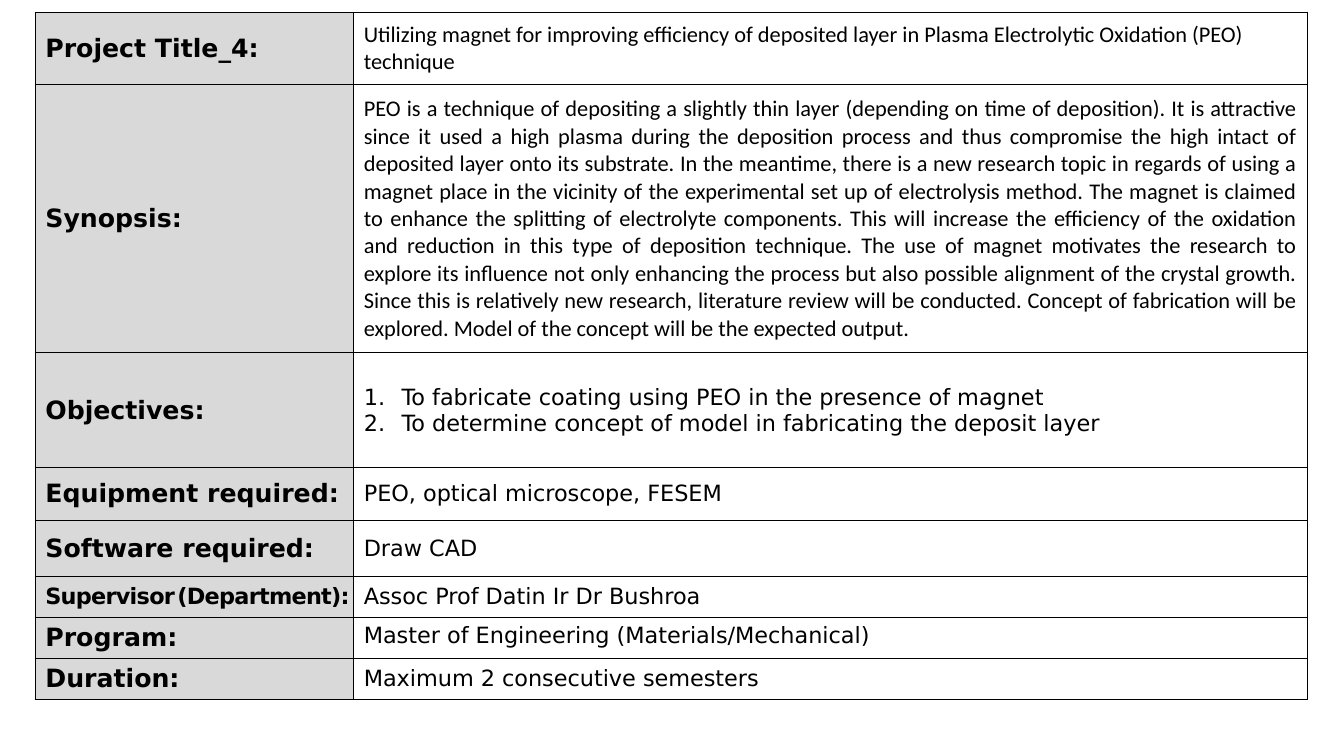
from dataclasses import dataclass

from lxml import etree
from pptx import Presentation
from pptx.dml.color import RGBColor
from pptx.enum.text import MSO_ANCHOR, PP_ALIGN
from pptx.oxml.ns import qn
from pptx.util import Pt

TOP, MIDDLE = MSO_ANCHOR.TOP, MSO_ANCHOR.MIDDLE
LEFT, JUSTIFY = PP_ALIGN.LEFT, PP_ALIGN.JUSTIFY


@dataclass(frozen=True)
class Theme:
    """Colours, fonts and type sizes."""
    ink: str = "000000"
    paper: str = "FFFFFF"
    shade: str = "D9D9D9"
    sans: str = "DejaVu Sans"
    prose: str = "Calibri"
    head: float = 18
    body: float = 16
    gap: float = 5
    rule: float = 1


@dataclass(frozen=True)
class Row:
    """One labelled row of the project sheet."""
    high: float
    label: str
    lines: tuple
    font: str = Theme.sans
    align: int = LEFT
    anchor: int = MIDDLE
    listed: bool = False
    tight: bool = False


THEME = Theme()
BOX = (25.2, 8.7)
COLS = (227.5, 681.1)
INDENT = 27
SYNOPSIS = (
    "PEO is a technique of depositing a slightly thin layer (depending on "
    "time of deposition).",
    "It is attractive since it used a high plasma during the deposition "
    "process and thus compromise the high intact of deposited layer onto "
    "its substrate.",
    "In the meantime, there is a new research topic in regards of using a "
    "magnet place in the vicinity of the experimental set up of "
    "electrolysis method.",
    "The magnet is claimed to enhance the splitting of electrolyte "
    "components.",
    "This will increase the efficiency of the oxidation and reduction in "
    "this type of deposition technique.",
    "The use of magnet motivates the research to explore its influence not "
    "only enhancing the process but also possible alignment of the crystal "
    "growth.",
    "Since this is relatively new research, literature review will be "
    "conducted.",
    "Concept of fabrication will be explored.",
    "Model of the concept will be the expected output.",
)
ROWS = (
    Row(51.9, "Project Title_4:", (
        "Utilizing magnet for improving efficiency of deposited layer in "
        "Plasma Electrolytic Oxidation (PEO) technique",), font=THEME.prose),
    Row(191.5, "Synopsis:", (" ".join(SYNOPSIS),),
        font=THEME.prose, align=JUSTIFY),
    Row(82.1, "Objectives:", (
        "To fabricate coating using PEO in the presence of magnet",
        "To determine concept of model in fabricating the deposit layer"),
        listed=True),
    Row(37.5, "Equipment required:", ("PEO, optical microscope, FESEM",)),
    Row(40.3, "Software required:", ("Draw CAD",)),
    Row(29.3, "Supervisor (Department):", ("Assoc Prof Datin Ir Dr Bushroa",),
        tight=True),
    Row(29.3, "Program:", ("Master of Engineering (Materials/Mechanical)",),
        anchor=TOP),
    Row(29.3, "Duration:", ("Maximum 2 consecutive semesters",)),
)


def add_run(para, text, size, font, bold=False, space=0):
    """Append one formatted run to a paragraph."""
    run = para.add_run()
    run.text = text
    run.font.size = Pt(size)
    run.font.name = font
    run.font.bold = bold
    run.font.color.rgb = RGBColor.from_string(THEME.ink)
    if space:
        run.font._element.set("spc", str(round(space * 100)))


def add_number(para):
    """Number a paragraph with a hanging indent."""
    props = para._p.get_or_add_pPr()
    props.set("marL", str(Pt(INDENT)))
    props.set("indent", str(-Pt(INDENT)))
    etree.SubElement(props, qn("a:buFont"), typeface="+mj-lt")
    etree.SubElement(props, qn("a:buAutoNum"), type="arabicPeriod")


def style_cell(cell, fill, anchor):
    """Set the fill, anchor and four borders of a cell."""
    cell.fill.solid()
    cell.fill.fore_color.rgb = RGBColor.from_string(fill)
    cell.vertical_anchor = anchor
    props = cell._tc.get_or_add_tcPr()
    for spot, side in enumerate(("lnL", "lnR", "lnT", "lnB")):
        line = etree.Element(qn(f"a:{side}"), w=str(Pt(THEME.rule)))
        paint = etree.SubElement(line, qn("a:solidFill"))
        etree.SubElement(paint, qn("a:srgbClr"), val=THEME.ink)
        props.insert(spot, line)


def fill_label(cell, row):
    """Write the shaded label of a row."""
    style_cell(cell, THEME.shade, MIDDLE)
    para = cell.text_frame.paragraphs[0]
    if not row.tight:
        add_run(para, row.label, THEME.head, THEME.sans, True)
        return
    cell.margin_right = Pt(0)
    sizes = (THEME.body, THEME.gap, THEME.body)
    for text, size in zip(row.label.partition(" "), sizes):
        add_run(para, text, size, THEME.sans, True, -0.5)


def fill_body(cell, row):
    """Write the text of a row."""
    style_cell(cell, THEME.paper, row.anchor)
    frame = cell.text_frame
    for spot, text in enumerate(row.lines):
        para = frame.add_paragraph() if spot else frame.paragraphs[0]
        para.alignment = row.align
        if row.listed:
            add_number(para)
        add_run(para, text, THEME.body, row.font)


def add_sheet(slide, left, top):
    """Place the project table with its corner at the given point."""
    high = sum(row.high for row in ROWS)
    frame = slide.shapes.add_table(len(ROWS), len(COLS), Pt(left), Pt(top),
                                   Pt(sum(COLS)), Pt(high))
    table = frame.table
    table.first_row = table.horz_banding = False
    for col, wide in zip(table.columns, COLS):
        col.width = Pt(wide)
    for line, row in zip(table.rows, ROWS):
        line.height = Pt(row.high)
        label, body = line.cells
        fill_label(label, row)
        fill_body(body, row)


def main():
    """Build and save the slide."""
    deck = Presentation()
    deck.slide_width, deck.slide_height = Pt(960), Pt(540)
    slide = deck.slides.add_slide(deck.slide_layouts[6])
    add_sheet(slide, *BOX)
    deck.save("out.pptx")


if __name__ == "__main__":
    main()
